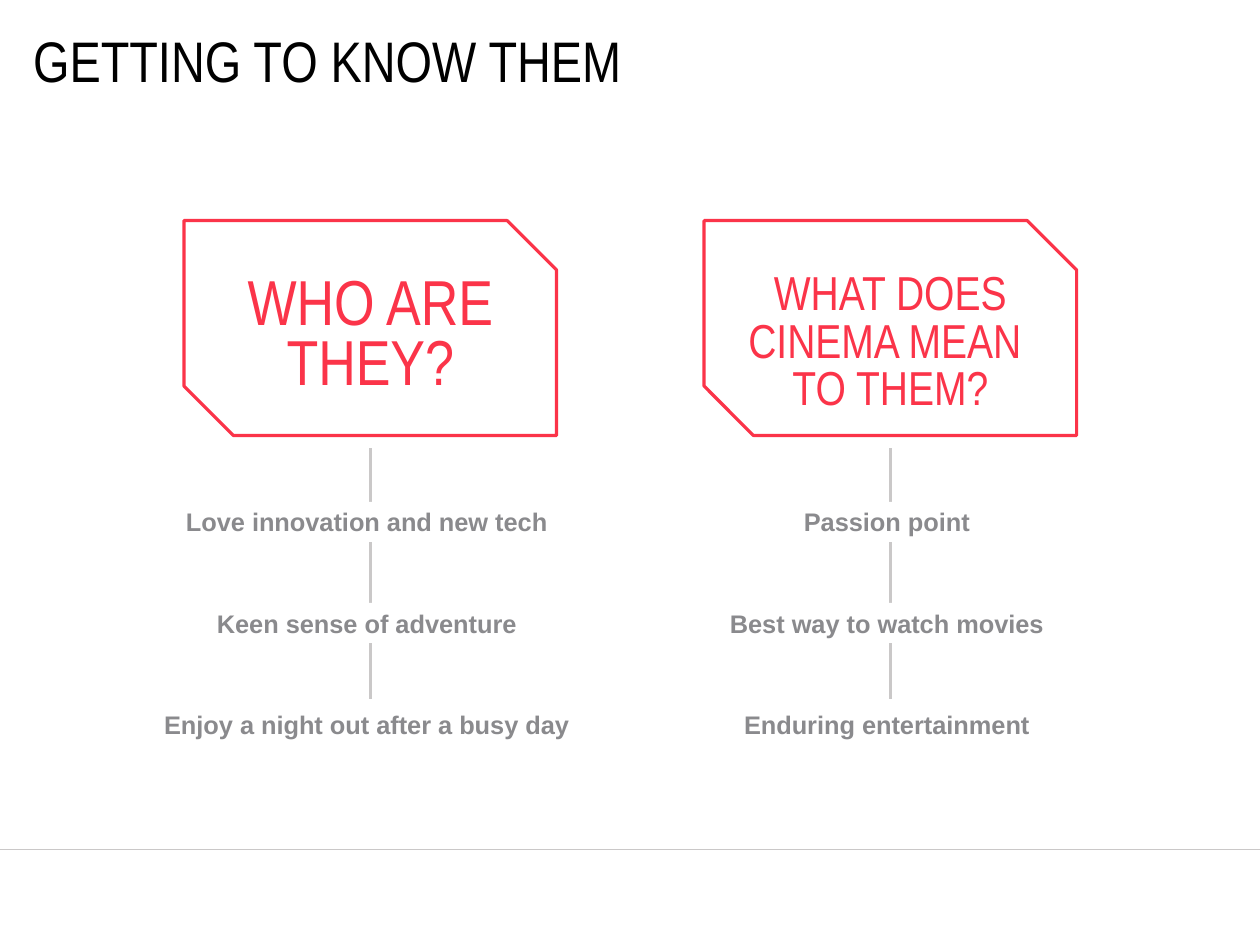
"""Audience slide: two framed questions, each with a chain of three answers."""
from lxml import etree
from pptx import Presentation
from pptx.dml.color import RGBColor
from pptx.enum.shapes import MSO_CONNECTOR, MSO_SHAPE
from pptx.enum.text import MSO_ANCHOR, PP_ALIGN
from pptx.oxml.ns import qn
from pptx.util import Cm, Inches, Pt

STRAIGHT = MSO_CONNECTOR.STRAIGHT
SNIPPED, RECT = MSO_SHAPE.SNIP_2_DIAG_RECTANGLE, MSO_SHAPE.RECTANGLE
MIDDLE, LEFT, CENTER = MSO_ANCHOR.MIDDLE, PP_ALIGN.LEFT, PP_ALIGN.CENTER

TITLE = "GETTING TO KNOW THEM"
COLUMNS = [
    {"question": ["WHO ARE THEY?"], "size": 40, "spacing": 38,
     "top": 2.37, "height": 1.17,
     "answers": ["Love innovation and new tech ", "Keen sense of adventure ",
                 "Enjoy a night out after a busy day "]},
    {"question": ["WHAT DOES", "CINEMA MEAN ", "TO THEM?"], "size": 30, "spacing": 30,
     "top": 2.33, "height": 1.36,
     "answers": ["Passion point ", "Best way to watch movies ",
                 "Enduring entertainment "]},
]
COLORS = {"title": "000000", "accent": "FB3449", "rule": "CAC8C8",
          "answer": "8A8A8D", "paper": "FFFFFF"}

WIDTH, HEIGHT = Cm(28), Cm(21)
FOOTER_Y = 7.43
FIRST_CENTER, COLUMN_PITCH = 3.24, 4.55
FRAME_TOP, FRAME_W, FRAME_H, SNIP = 1.93, 3.26, 1.88, 0.23
QUESTION_W = 3.04
CHAIN_TOP, CHAIN_BOTTOM = 3.92, 6.12
ANSWER_TOP, ANSWER_LAST, ANSWER_W, ANSWER_H = 4.39, 6.16, 3.91, 0.35


def color(name):
    return RGBColor.from_string(COLORS[name])


def add_rule(slide, x1, y1, x2, y2, weight):
    line = slide.shapes.add_connector(
        STRAIGHT, Inches(x1), Inches(y1), Inches(x2), Inches(y2))
    line.line.color.rgb = color("rule")
    line.line.width = Pt(weight)
    etree.SubElement(line._element.spPr, qn("a:effectLst"))


def add_frame(slide, center):
    s = slide.shapes.add_shape(SNIPPED, Inches(center - FRAME_W / 2), Inches(FRAME_TOP),
                               Inches(FRAME_W), Inches(FRAME_H))
    s.adjustments[0], s.adjustments[1] = 0, SNIP
    s.shadow.inherit = False
    s.fill.background()
    s.line.color.rgb = color("accent")
    s.line.width = Pt(2)


def write(s, lines, font, size, ink, align=CENTER, inset=(0.1, 0.05),
          spacing=None, bold=False):
    tf = s.text_frame
    tf.word_wrap = True
    tf.vertical_anchor = MIDDLE
    tf.margin_left = tf.margin_right = Inches(inset[0])
    tf.margin_top = tf.margin_bottom = Inches(inset[1])
    p = tf.paragraphs[0]
    p.alignment = align
    if spacing:
        p.line_spacing = Pt(spacing)
    for i, line in enumerate(lines):
        if i:
            p.add_line_break()
        r = p.add_run()
        r.text = line
        r.font.name, r.font.size, r.font.bold = font, Pt(size), bold
        r.font.color.rgb = color(ink)


def add_answer(slide, center, top, text):
    s = slide.shapes.add_shape(
        RECT, Inches(center - ANSWER_W / 2), Inches(top),
        Inches(ANSWER_W), Inches(ANSWER_H))
    s.shadow.inherit = False
    s.fill.solid()
    s.fill.fore_color.rgb = color("paper")
    s.line.fill.background()
    write(s, [text], "Arial", 16, "answer", inset=(0.1, 0.04), bold=True)


def add_column(slide, column, center):
    add_frame(slide, center)
    add_rule(slide, center, CHAIN_TOP, center, CHAIN_BOTTOM, 2)
    s = slide.shapes.add_textbox(
        Inches(center - QUESTION_W / 2), Inches(column["top"]),
        Inches(QUESTION_W), Inches(column["height"]))
    write(s, column["question"], "Arial Narrow", column["size"], "accent",
          spacing=column["spacing"])
    pitch = (ANSWER_LAST - ANSWER_TOP) / (len(column["answers"]) - 1)
    for row, text in enumerate(column["answers"]):
        add_answer(slide, center, ANSWER_TOP + row * pitch, text)


def main():
    prs = Presentation()
    prs.slide_width, prs.slide_height = WIDTH, HEIGHT
    slide = prs.slides.add_slide(prs.slide_layouts[6])
    add_rule(slide, 0, FOOTER_Y, WIDTH.inches, FOOTER_Y, 0.5)
    s = slide.shapes.add_textbox(Inches(0.29), Inches(0.3), Inches(10.18), Inches(0.45))
    write(s, [TITLE], "Arial Narrow", 36, "title", align=LEFT, inset=(0, 0))
    for i, column in enumerate(COLUMNS):
        add_column(slide, column, FIRST_CENTER + i * COLUMN_PITCH)
    prs.save("out.pptx")


if __name__ == "__main__":
    main()
